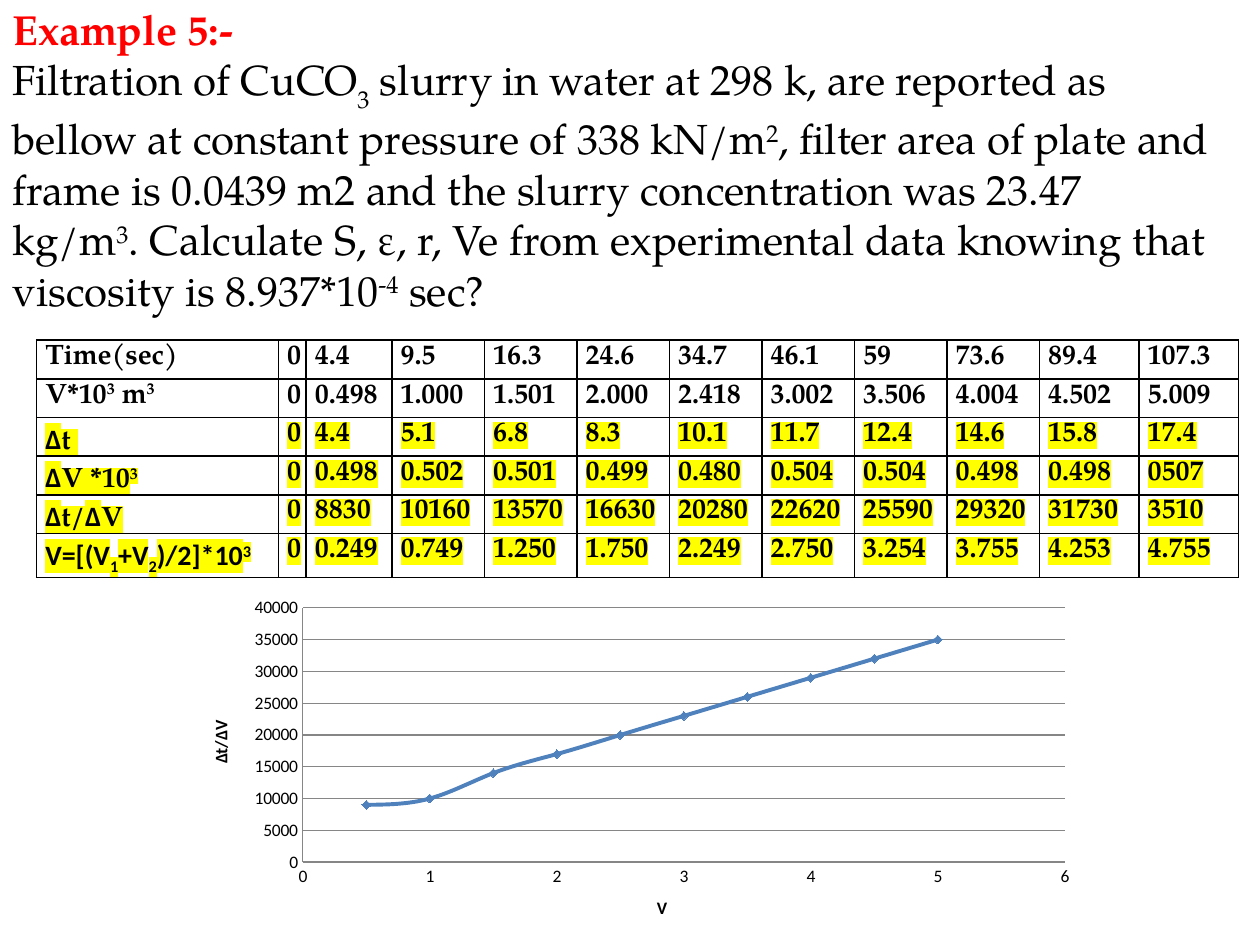
import pptx
import pptx.chart.data
import pptx.dml.color
import pptx.enum.chart
import pptx.enum.text
import pptx.oxml
import pptx.oxml.ns
import pptx.util
from pptx.util import Inches

BLACK = pptx.dml.color.RGBColor(0x00, 0x00, 0x00)
RED = pptx.dml.color.RGBColor(0xFF, 0x00, 0x00)
YELLOW = pptx.dml.color.RGBColor(0xFF, 0xFF, 0x00)
BLUE = pptx.dml.color.RGBColor(0x4F, 0x81, 0xBD)
GRAY = pptx.dml.color.RGBColor(0x86, 0x86, 0x86)

SERIF = "TeX Gyre Pagella"
SANS = "Calibri"
SUPERSCRIPT = 30
SUBSCRIPT = -25

# Runs are (text, baseline shift in percent, font)
PROBLEM = [
    ("Filtration of CuCO", 0, SERIF), ("3", -30, SERIF),
    (" slurry in water at 298 k, are reported as bellow at constant "
     "pressure of 338 kN/m", 0, SERIF),
    ("2", SUPERSCRIPT, SERIF),
    (", filter area of plate and frame is 0.0439 m2 and the slurry "
     "concentration was 23.47 kg/m", 0, SERIF),
    ("3", SUPERSCRIPT, SERIF),
    (". Calculate S, ε, r, Ve from experimental data knowing that "
     "viscosity is 8.937*10", 0, SERIF),
    ("-4", SUPERSCRIPT, SERIF), (" sec?", 0, SERIF),
]

# Each table row: label runs, values
TABLE_ROWS = [
    ([("Time(sec)", 0, SERIF)],
     "0 4.4 9.5 16.3 24.6 34.7 46.1 59 73.6 89.4 107.3"),
    ([("V*10", 0, SERIF), ("3", SUPERSCRIPT, SERIF),
      (" m", 0, SERIF), ("3", SUPERSCRIPT, SERIF)],
     "0 0.498 1.000 1.501 2.000 2.418 3.002 3.506 4.004 4.502 5.009"),
    ([("∆", 0, SANS), ("t ", 0, SERIF)],
     "0 4.4 5.1 6.8 8.3 10.1 11.7 12.4 14.6 15.8 17.4"),
    ([("∆", 0, SANS), ("V *10", 0, SERIF), ("3", SUPERSCRIPT, SERIF)],
     "0 0.498 0.502 0.501 0.499 0.480 0.504 0.504 0.498 0.498 0507"),
    ([("∆", 0, SANS), ("t/", 0, SERIF), ("∆", 0, SANS), ("V", 0, SERIF)],
     "0 8830 10160 13570 16630 20280 22620 25590 29320 31730 3510"),
    ([("V=[(V", 0, SANS), ("1", SUBSCRIPT, SANS), ("+V", 0, SANS),
      ("2", SUBSCRIPT, SANS), (")/2]*10", 0, SANS), ("3", SUPERSCRIPT, SANS)],
     "0 0.249 0.749 1.250 1.750 2.249 2.750 3.254 3.755 4.253 4.755"),
]
FIRST_CALCULATED_ROW = 2

# The seven middle columns share what the others leave
TABLE_WIDTH = 9.54
LEFT_WIDTHS, RIGHT_WIDTHS = [1.92, 0.22, 0.68], [0.79, 0.79]
MIDDLE_WIDTH = (TABLE_WIDTH - sum(LEFT_WIDTHS) - sum(RIGHT_WIDTHS)) / 7
COLUMN_WIDTHS = LEFT_WIDTHS + [MIDDLE_WIDTH] * 7 + RIGHT_WIDTHS

# One value for each half unit of V; the first has none
CURVE = [None, 9000, 10000, 14000, 17000, 20000,
         23000, 26000, 29000, 32000, 35000]


def add_runs(paragraph, runs, size, color, bold, highlight=None):
    for text, baseline, font_name in runs:
        run = paragraph.add_run()
        run.text = text
        run.font.size = pptx.util.Pt(size)
        run.font.bold = bold
        run.font.color.rgb = color
        properties = run.font._element
        if baseline:
            properties.set("baseline", str(baseline * 1000))
        if highlight is not None:
            properties.append(pptx.oxml.parse_xml(
                f'<a:highlight {pptx.oxml.ns.nsdecls("a")}>'
                f'<a:srgbClr val="{highlight}"/></a:highlight>'))
        run.font.name = font_name


def add_problem(slide):
    title = slide.shapes.title
    title.left, title.top = Inches(0), Inches(0)
    title.width, title.height = Inches(9.75), Inches(2.52)
    frame = title.text_frame
    frame.word_wrap = True
    frame.auto_size = pptx.enum.text.MSO_AUTO_SIZE.SHAPE_TO_FIT_TEXT
    frame.vertical_anchor = pptx.enum.text.MSO_ANCHOR.MIDDLE
    heading, body = frame.paragraphs[0], frame.add_paragraph()
    add_runs(heading, [("Example 5:-", 0, SERIF)], 24, RED, True)
    add_runs(body, PROBLEM, 24, BLACK, False)
    for paragraph in (heading, body):
        paragraph.alignment = pptx.enum.text.PP_ALIGN.LEFT


def set_borders(cell):
    properties = cell._tc.get_or_add_tcPr()
    for position, side in enumerate(("lnL", "lnR", "lnT", "lnB")):
        properties.insert(position, pptx.oxml.parse_xml(
            f'<a:{side} {pptx.oxml.ns.nsdecls("a")} w="12700"><a:solidFill>'
            f'<a:srgbClr val="{BLACK}"/></a:solidFill></a:{side}>'))


def fill_cell(cell, runs, highlight):
    cell.margin_left = cell.margin_right = Inches(0.07)
    cell.margin_top = cell.margin_bottom = 0
    cell.fill.background()
    set_borders(cell)
    paragraph = cell.text_frame.paragraphs[0]
    paragraph.line_spacing = 1.15
    paragraph.space_after = pptx.util.Pt(10)
    add_runs(paragraph, runs, 16, BLACK, True, highlight)


def add_data_table(slide):
    table = slide.shapes.add_table(
        len(TABLE_ROWS), len(COLUMN_WIDTHS),
        Inches(0.29), Inches(2.7), Inches(TABLE_WIDTH), Inches(1.84)).table
    table.first_row = table.horz_banding = False
    for column, width in zip(table.columns, COLUMN_WIDTHS):
        column.width = Inches(width)
    for row_index, (label, values) in enumerate(TABLE_ROWS):
        table.rows[row_index].height = Inches(0.3)
        highlight = YELLOW if row_index >= FIRST_CALCULATED_ROW else None
        contents = [label] + [[(value, 0, SERIF)] for value in values.split()]
        for column_index, runs in enumerate(contents):
            fill_cell(table.cell(row_index, column_index), runs, highlight)


def format_axis(axis, title, maximum, step):
    axis.minimum_scale, axis.maximum_scale = 0, maximum
    axis.major_unit = step
    axis.major_tick_mark = pptx.enum.chart.XL_TICK_MARK.NONE
    axis.minor_tick_mark = pptx.enum.chart.XL_TICK_MARK.NONE
    axis.format.line.color.rgb = GRAY
    axis.axis_title.text_frame.text = title
    font = axis.axis_title.text_frame.paragraphs[0].runs[0].font
    font.size = pptx.util.Pt(10)
    font.bold = True
    font.name = SANS
    font.color.rgb = BLACK


def format_curve(series):
    series.format.line.color.rgb = BLUE
    series.format.line.width = pptx.util.Pt(2.25)
    series.marker.style = pptx.enum.chart.XL_MARKER_STYLE.DIAMOND
    series.marker.size = 5
    series.marker.format.fill.solid()
    series.marker.format.fill.fore_color.rgb = BLUE
    series.marker.format.line.color.rgb = BLUE
    # Scatter series need XML for smoothing and for an empty value
    element = series._element
    for smooth in element.xpath("c:smooth"):
        smooth.set("val", "1")
    for point in element.xpath("c:yVal//c:pt[@idx='0']"):
        point.getparent().remove(point)


def add_curve_chart(slide):
    data = pptx.chart.data.XyChartData()
    points = data.add_series("Series 1")
    for index, value in enumerate(CURVE):
        points.add_data_point(index * 0.5, value)
    chart = slide.shapes.add_chart(
        pptx.enum.chart.XL_CHART_TYPE.XY_SCATTER_SMOOTH,
        Inches(1.46), Inches(4.69), Inches(7.17), Inches(2.81), data).chart
    chart.has_legend = False
    chart.has_title = False
    chart.font.size = pptx.util.Pt(10)
    chart.font.name = SANS
    chart.font.color.rgb = BLACK
    chart.plots[0].vary_by_categories = False

    # Axes and gridlines
    format_axis(chart.category_axis, "V", 6, 1)
    format_axis(chart.value_axis, "∆t/∆V", 40000, 5000)
    chart.category_axis.has_major_gridlines = False
    chart.value_axis.has_major_gridlines = True
    chart.value_axis.major_gridlines.format.line.color.rgb = GRAY

    format_curve(chart.plots[0].series[0])


def main():
    presentation = pptx.Presentation()
    presentation.slide_width = Inches(10)
    presentation.slide_height = Inches(7.5)
    title_only = presentation.slide_layouts[5]
    slide = presentation.slides.add_slide(title_only)
    add_problem(slide)
    add_data_table(slide)
    add_curve_chart(slide)
    presentation.save("out.pptx")


if __name__ == "__main__":
    main()
